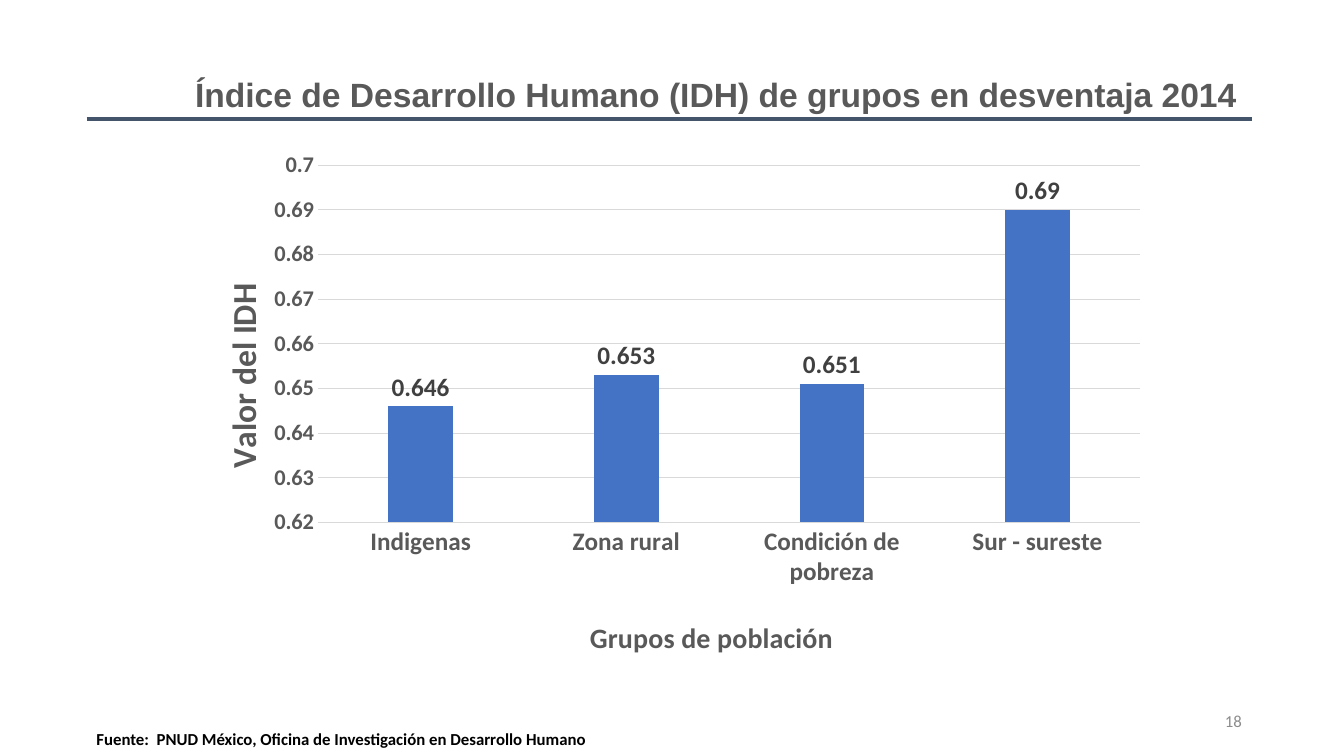
"""Build the slide on the Human Development Index of disadvantaged groups."""
from dataclasses import dataclass

from lxml.etree import SubElement
from pptx import Presentation
from pptx.chart.axis import _BaseAxis
from pptx.chart.chart import Chart
from pptx.chart.data import CategoryChartData
from pptx.dml.color import RGBColor
from pptx.enum.chart import XL_CHART_TYPE, XL_LABEL_POSITION, XL_TICK_MARK
from pptx.enum.shapes import MSO_CONNECTOR
from pptx.enum.text import MSO_ANCHOR, PP_ALIGN
from pptx.oxml import parse_xml
from pptx.oxml.ns import nsdecls, qn
from pptx.slide import Slide
from pptx.text.text import Font
from pptx.util import Cm, Pt

GRAY = "595959"
LIGHT_GRAY = "D9D9D9"
GROUPS = {
    "Indigenas": 0.646,
    "Zona rural": 0.653,
    "Condición de pobreza": 0.651,
    "Sur - sureste": 0.69,
}


@dataclass
class Label:
    text: str
    left: float
    top: float
    width: float
    height: float
    size: int = 12
    font: str = "Calibri"
    color: str = GRAY
    bold: bool = True
    align: PP_ALIGN = PP_ALIGN.RIGHT
    anchor: MSO_ANCHOR = MSO_ANCHOR.TOP


@dataclass
class AxisStyle:
    title: str
    title_size: int
    tick_size: int
    title_x: float
    title_y: float
    rotation: int = 0


LABELS = [
    Label("Fuente:  PNUD México, Oficina de Investigación en Desarrollo Humano",
          2.18, 18.24, 27.99, 0.76, color="000000", align=PP_ALIGN.JUSTIFY),
    Label("18", 23.93, 17.65, 7.62, 1.02, color="8C8C8C", bold=False,
          anchor=MSO_ANCHOR.MIDDLE),
    Label("Índice de Desarrollo Humano (IDH) de grupos en desventaja 2014",
          2.72, 1.75, 28.7, 1.17, size=24, font="Arial"),
]
CATEGORY_STYLE = AxisStyle("Grupos de población", 20, 18, 0.41, 0.9)
VALUE_STYLE = AxisStyle("Valor del IDH", 24, 16, 0.03, 0.26, rotation=-90)


def rgb(color: str) -> RGBColor:
    return RGBColor.from_string(color)


def format_font(font: Font, size: int, color: str = GRAY, bold: bool = True,
                name: str = "Calibri") -> None:
    font.name = name
    font.size = Pt(size)
    font.bold = bold
    font.color.rgb = rgb(color)


def add_label(slide: Slide, label: Label) -> None:
    shape = slide.shapes.add_textbox(
        Cm(label.left), Cm(label.top), Cm(label.width), Cm(label.height))
    frame = shape.text_frame
    frame.word_wrap = True
    frame.vertical_anchor = label.anchor
    paragraph = frame.paragraphs[0]
    paragraph.alignment = label.align
    run = paragraph.add_run()
    run.text = label.text
    format_font(run.font, label.size, label.color, label.bold, label.font)


def set_layout(parent, index: int, **settings: object) -> None:
    """Place a chart part by fractions of the chart area."""
    previous = parent.find(qn("c:layout"))
    if previous is not None:
        parent.remove(previous)
    layout = parse_xml(f"<c:layout {nsdecls('c')}><c:manualLayout/></c:layout>")
    for name, value in settings.items():
        SubElement(layout[0], qn(f"c:{name}"), val=str(value))
    parent.insert(index, layout)


def format_axis(axis: _BaseAxis, style: AxisStyle) -> None:
    axis.major_tick_mark = XL_TICK_MARK.NONE
    axis.minor_tick_mark = XL_TICK_MARK.NONE
    format_font(axis.tick_labels.font, style.tick_size)
    title = axis.axis_title
    frame = title.text_frame
    run = frame.paragraphs[0].add_run()
    run.text = style.title
    format_font(run.font, style.title_size)
    frame._txBody.bodyPr.set("rot", str(style.rotation * 60000))
    set_layout(title._element, 1, xMode="edge", yMode="edge",
               x=style.title_x, y=style.title_y)


def format_columns(chart: Chart) -> None:
    plot = chart.plots[0]
    plot.gap_width = 219
    plot.overlap = -27
    plot.vary_by_categories = False
    fill = plot.series[0].format.fill
    fill.solid()
    fill.fore_color.rgb = rgb("4472C4")
    plot.has_data_labels = True
    labels = plot.data_labels
    labels.show_value = True
    labels.position = XL_LABEL_POSITION.OUTSIDE_END
    format_font(labels.font, 18, "404040")


def add_index_chart(slide: Slide) -> None:
    data = CategoryChartData()
    data.categories = list(GROUPS)
    data.add_series("IDH", list(GROUPS.values()))
    chart = slide.shapes.add_chart(
        XL_CHART_TYPE.COLUMN_CLUSTERED,
        Cm(4.67), Cm(3.56), Cm(24.56), Cm(13.21), data).chart
    chart.has_title = False
    chart.has_legend = False
    format_font(chart.font, 10, "000000", bold=False)
    format_columns(chart)

    format_axis(chart.category_axis, CATEGORY_STYLE)
    format_axis(chart.value_axis, VALUE_STYLE)
    value_axis = chart.value_axis
    value_axis.minimum_scale = 0.62
    value_axis.maximum_scale = 0.7
    value_axis.major_unit = 0.01
    value_axis.format.line.fill.background()
    for line in (chart.category_axis.format.line,
                 value_axis.major_gridlines.format.line):
        line.color.rgb = rgb(LIGHT_GRAY)
        line.width = Pt(0.75)
    set_layout(chart._chartSpace.chart.plotArea, 0, layoutTarget="inner",
               xMode="edge", yMode="edge", x=0.136, y=0.046, w=0.844, h=0.681)


def add_title_rule(slide: Slide) -> None:
    rule = slide.shapes.add_connector(
        MSO_CONNECTOR.STRAIGHT, Cm(2.18), Cm(3), Cm(31.55), Cm(3))
    rule.line.color.rgb = rgb("44546A")
    rule.line.width = Pt(3)
    SubElement(rule._element.spPr, qn("a:effectLst"))


def main() -> None:
    presentation = Presentation()
    presentation.slide_width = Cm(33.87)
    presentation.slide_height = Cm(19.05)
    slide = presentation.slides.add_slide(presentation.slide_layouts[6])
    add_index_chart(slide)
    add_title_rule(slide)
    for label in LABELS:
        add_label(slide, label)
    presentation.save("out.pptx")


if __name__ == "__main__":
    main()
